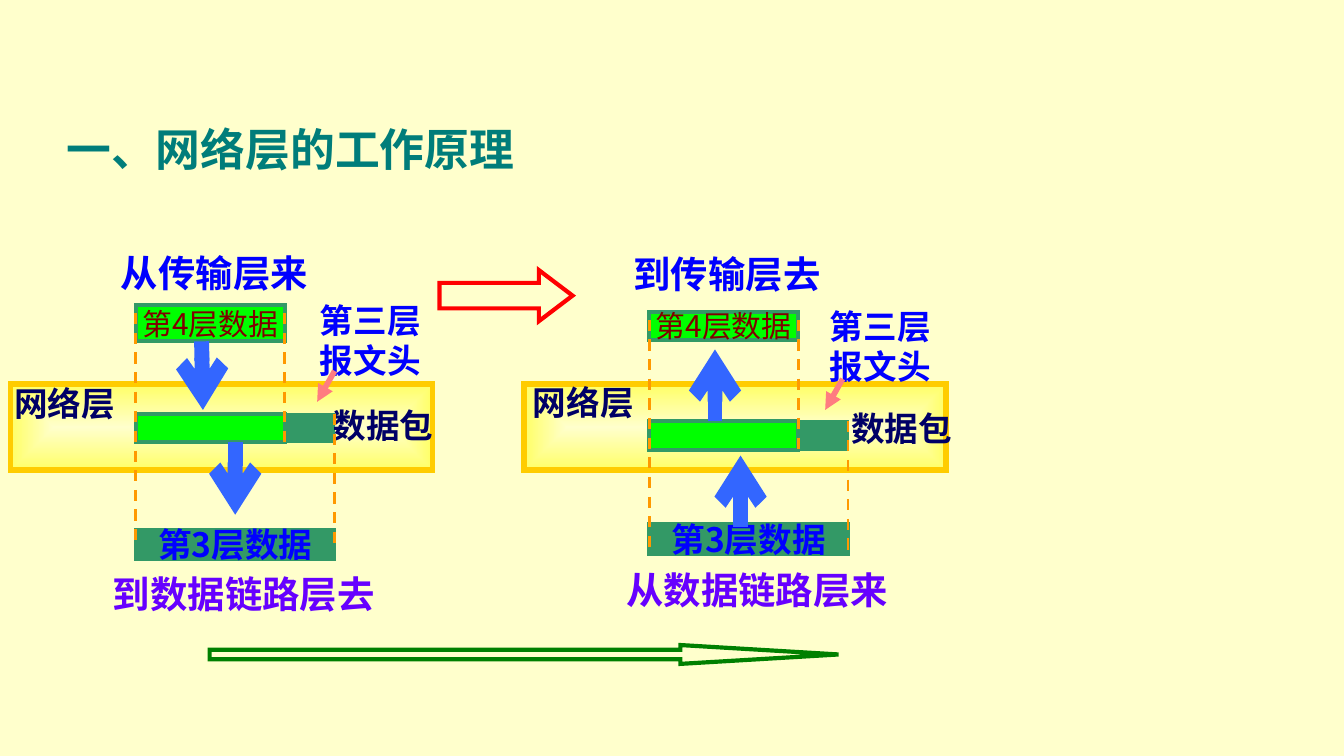
import pptx
import pptx.util
import pptx.dml.color
import pptx.enum.dml
import pptx.enum.shapes
import pptx.enum.text
import pptx.oxml
import pptx.oxml.ns
from dataclasses import dataclass

Inches = pptx.util.Inches
Pt = pptx.util.Pt
SHAPES = pptx.enum.shapes.MSO_SHAPE


@dataclass(frozen=True)
class Theme:
    background: str = "FFFFCC"
    title: str = "007D7A"
    navy: str = "000066"
    blue: str = "0000FF"
    purple: str = "6600FF"
    maroon: str = "800000"
    lime: str = "00FF00"
    green: str = "339966"
    glow: str = "FFFF66"
    gold: str = "FFCC00"
    guide: str = "FF9900"
    flow: str = "3366FF"
    pointer: str = "FF7C80"
    red: str = "FF0000"
    dark_green: str = "008000"
    latin: str = "Arial"
    chinese: str = "Noto Sans CJK SC"
    serif: str = "Times New Roman"
    title_size: float = 24
    heading_size: float = 20
    label_size: float = 18
    data_size: float = 16


THEME = Theme()


def rgb(value):
    return pptx.dml.color.RGBColor.from_string(value)


def add_xml(parent, tag, content="", **attributes):
    pairs = "".join(f' {name}="{value}"' for name, value in attributes.items())
    parent.append(pptx.oxml.parse_xml(
        f'<a:{tag} {pptx.oxml.ns.nsdecls("a")}{pairs}>{content}</a:{tag}>'))


def write_text(shape, text, size, color, font=THEME.latin, bold=True):
    """Centre unwrapped text in a shape, one paragraph for each line."""
    frame = shape.text_frame
    frame.word_wrap = False
    frame.vertical_anchor = pptx.enum.text.MSO_ANCHOR.MIDDLE
    frame.margin_left = frame.margin_right = frame.margin_top = frame.margin_bottom = 0
    for index, line in enumerate(text.split("\n")):
        paragraph = frame.paragraphs[0] if index == 0 else frame.add_paragraph()
        paragraph.alignment = pptx.enum.text.PP_ALIGN.CENTER
        run = paragraph.add_run()
        run.text = line
        run.font.size = Pt(size)
        run.font.bold = bold
        run.font.name = font
        run.font.color.rgb = rgb(color)
        add_xml(run.font._element, "ea", typeface=THEME.chinese)


class SlideBuilder:
    def __init__(self, slide, theme):
        self.slide = slide
        self.theme = theme
        slide.background.fill.solid()
        slide.background.fill.fore_color.rgb = rgb(theme.background)

    def label(self, box, text, size, color, **style):
        shape = self.slide.shapes.add_textbox(*map(Inches, box))
        write_text(shape, text, size, color, **style)

    def shape(self, box, line, width, fill=None, kind=SHAPES.RECTANGLE):
        shape = self.slide.shapes.add_shape(kind, *map(Inches, box))
        shape.shadow.inherit = False
        if fill:
            shape.fill.solid()
            shape.fill.fore_color.rgb = rgb(fill)
        else:
            shape.fill.background()
        shape.line.color.rgb = rgb(line)
        shape.line.width = Pt(width)
        add_xml(shape.line._get_or_add_ln(), "miter", lim="800000")
        return shape

    def block_arrow(self, box, color, head_length):
        arrow = self.shape(box, color, 2.25, kind=SHAPES.RIGHT_ARROW)
        arrow.adjustments[0] = 0.5
        arrow.adjustments[1] = head_length

    def layer_band(self, box):
        """Gold-framed band with a gradient spreading from its centre."""
        band = self.shape(box, self.theme.gold, 3)
        band.fill.gradient()
        stops = band.fill.gradient_stops
        for stop, color in zip(stops, (self.theme.background, self.theme.glow)):
            stop.color.rgb = rgb(color)
        stops[0].position, stops[1].position = 0, 1
        gradient = band.fill._xPr.find(pptx.oxml.ns.qn("a:gradFill"))
        gradient.remove(gradient.find(pptx.oxml.ns.qn("a:lin")))
        add_xml(gradient, "path", '<a:fillToRect l="50000" t="50000" r="50000" b="50000"/>',
                **{"path": "shape"})

    def line(self, start, end, color, width, head=None, dashed=False):
        connector = self.slide.shapes.add_connector(
            pptx.enum.shapes.MSO_CONNECTOR.STRAIGHT, *map(Inches, (*start, *end)))
        connector.line.color.rgb = rgb(color)
        connector.line.width = Pt(width)
        if dashed:
            connector.line.dash_style = pptx.enum.dml.MSO_LINE.DASH
        if head:
            add_xml(connector.line._get_or_add_ln(), "tailEnd", type=head)
        add_xml(connector._element.spPr, "effectLst")

    def host(self, left, band_left, layer4, packet, layer3_top, guide_top, layer_label,
             packet_label, header_label, heading, heading_text):
        """One host: layer 4 data, the packet in its layer band, and layer 3 data."""
        theme = self.theme
        data_width, header_width = 1.11, 0.37
        split, right = left + data_width, left + data_width + header_width
        packet_top, packet_height = packet

        self.layer_band((band_left, 2.86, 3.14, 0.64))
        self.label(layer_label, "网络层", theme.label_size, theme.navy)
        self.shape((left, packet_top, data_width, packet_height), theme.green, 2, theme.lime)
        self.shape((split, packet_top, header_width, packet_height),
                   theme.green, 0.75, theme.green)
        self.label(packet_label, "数据包", theme.label_size, theme.navy)

        upper = self.shape((left, layer4[0], data_width, layer4[1]), theme.green, 2, theme.lime)
        write_text(upper, "第4层数据", theme.data_size, theme.maroon,
                   font=theme.chinese, bold=False)
        lower = self.shape((left, layer3_top, data_width + header_width, 0.22),
                           theme.green, 2, theme.green)
        write_text(lower, "第3层数据", theme.label_size, theme.blue, font=theme.chinese)

        guide_bottom = guide_top + 1.71
        for x, top, bottom in ((left, guide_top, guide_bottom),
                               (split, guide_top, packet_top + packet_height),
                               (right, packet_top, guide_bottom)):
            self.line((x, top), (x, bottom), theme.guide, 1.5, dashed=True)
        self.label(heading, heading_text, theme.heading_size, theme.blue)
        self.label(header_label, "第三层\n报文头", theme.label_size, theme.blue)


def main():
    presentation = pptx.Presentation()
    presentation.slide_width = Inches(10)
    presentation.slide_height = presentation.slide_width * 9 // 16
    theme = THEME
    builder = SlideBuilder(presentation.slides.add_slide(presentation.slide_layouts[6]), theme)

    builder.label((0.27, 0.81, 3.78, 0.59), "一、网络层的工作原理",
                  theme.title_size, theme.title, font=theme.serif)
    builder.host(left=1.01, band_left=0.08, layer4=(2.27, 0.27), packet=(3.08, 0.21),
                 layer3_top=3.94, guide_top=2.33,
                 layer_label=(0.08, 2.92, 0.8, 0.16), packet_label=(2.45, 3.08, 0.8, 0.16),
                 header_label=(2.29, 2.25, 0.93, 0.56),
                 heading=(0.7, 1.79, 1.79, 0.48), heading_text="从传输层来")
    builder.host(left=4.83, band_left=3.9, layer4=(2.32, 0.21), packet=(3.13, 0.22),
                 layer3_top=3.9, guide_top=2.38,
                 layer_label=(3.94, 2.89, 0.8, 0.21), packet_label=(6.31, 3.08, 0.8, 0.21),
                 header_label=(6.15, 2.27, 0.8, 0.61),
                 heading=(4.7, 1.9, 1.42, 0.27), heading_text="到传输层去")

    for start, end in (((1.5, 2.54), (1.51, 3.05)), ((1.75, 3.29), (1.75, 3.83)),
                       ((5.32, 3.13), (5.32, 2.6)), ((5.51, 3.92), (5.51, 3.39))):
        builder.line(start, end, theme.flow, 8, head="arrow")
    builder.label((0.53, 4.2, 2.57, 0.43), "到数据链路层去", theme.heading_size, theme.purple)
    builder.label((4.34, 4.15, 2.59, 0.48), "从数据链路层来", theme.heading_size, theme.purple)
    for x, y in ((2.49, 2.76), (6.27, 2.82)):
        builder.line((x, y), (x - 0.13, y + 0.23), theme.pointer, 3, head="triangle")

    builder.block_arrow((3.27, 2.01, 0.99, 0.38), theme.red, 0.66)
    builder.block_arrow((1.56, 4.8, 4.68, 0.14), theme.dark_green, 8.4)
    presentation.save("out.pptx")


if __name__ == "__main__":
    main()
